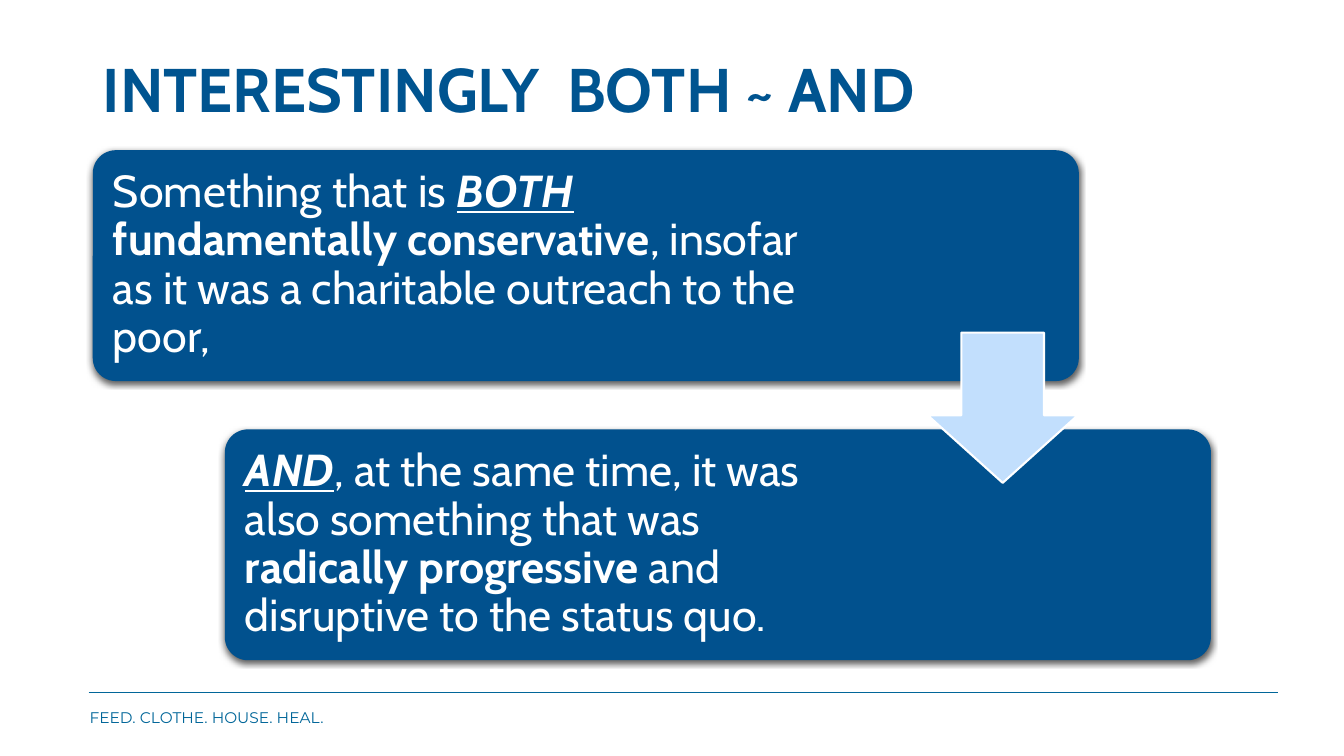
from lxml import etree
from pptx import Presentation
from pptx.dml.color import RGBColor
from pptx.enum.shapes import MSO_CONNECTOR as Connector, MSO_SHAPE as Shape
from pptx.enum.text import MSO_ANCHOR as Anchor
from pptx.oxml import parse_xml
from pptx.oxml.ns import nsdecls, qn
from pptx.util import Inches, Pt

TITLE_BLUE = RGBColor(0x00, 0x54, 0x90)
CARD_BLUE = RGBColor(0x01, 0x51, 0x8E)
FOOTER_BLUE = RGBColor(0x01, 0x66, 0x99)
ARROW_BLUE = RGBColor(0xC2, 0xDF, 0xFD)
WHITE = RGBColor(0xFF, 0xFF, 0xFF)

CARD_WIDTH, CARD_HEIGHT = 9.78, 2.29
TEXT_OFFSET = 0.07
STRONG = {"bold": True}
EMPHASIS = {"bold": True, "italic": True, "underline": True}

# Left, top, text width, spans
CARDS = [
    (0.92, 1.49, 7.41, [
        ("Something that is ", {}),
        ("BOTH", EMPHASIS),
        (" ", {}),
        ("fundamentally conservative", STRONG),
        (", insofar as it was a charitable outreach to the poor,", {}),
    ]),
    (2.23, 4.26, 6.43, [
        ("AND", EMPHASIS),
        (", at the same time, it was also something that was ", {}),
        ("radically progressive", STRONG),
        (" and disruptive to the status quo.", {}),
    ]),
]


def add_text(page, place, spans, font, color, anchor=Anchor.MIDDLE,
             inset=None, line_spacing=None):
    """Add a one-paragraph box; each span is a text with its own font values."""
    frame = page.shapes.add_textbox(*map(Inches, place)).text_frame
    frame.word_wrap = True
    frame.vertical_anchor = anchor
    if inset is not None:
        for side in ("left", "top", "right", "bottom"):
            setattr(frame, f"margin_{side}", Inches(inset))
    para = frame.paragraphs[0]
    para.line_spacing = line_spacing
    for text, emphasis in spans:
        span = para.add_run()
        span.text = text
        for name, value in {**font, **emphasis}.items():
            setattr(span.font, name, value)
        span.font.color.rgb = color


def add_filled_shape(page, kind, place, fill, adjustments):
    shape = page.shapes.add_shape(kind, *map(Inches, place))
    shape.shadow.inherit = False
    shape.fill.solid()
    shape.fill.fore_color.rgb = fill
    for index, value in enumerate(adjustments):
        shape.adjustments[index] = value
    return shape


def add_drop_shadow(shape):
    effects = shape.element.spPr.find(qn("a:effectLst"))
    effects.append(parse_xml(
        f'<a:outerShdw {nsdecls("a")} blurRad="{Pt(4.5)}" dist="{Pt(1.5)}" '
        'dir="5400000" algn="ctr" rotWithShape="0">'
        '<a:srgbClr val="000000"><a:alpha val="63000"/></a:srgbClr>'
        '</a:outerShdw>'))


def add_card(page, left, top, text_width, spans):
    card = add_filled_shape(page, Shape.ROUNDED_RECTANGLE,
                            (left, top, CARD_WIDTH, CARD_HEIGHT),
                            CARD_BLUE, [0.1])
    card.line.fill.background()
    add_drop_shadow(card)
    place = (left + TEXT_OFFSET, top + TEXT_OFFSET,
             text_width, CARD_HEIGHT - 2 * TEXT_OFFSET)
    add_text(page, place, spans, {"name": "Cabin", "size": Pt(32)}, WHITE,
             inset=0.13, line_spacing=0.9)


def add_arrow(page):
    arrow = add_filled_shape(page, Shape.DOWN_ARROW, (9.2, 3.3, 1.49, 1.49),
                             ARROW_BLUE, [0.55, 0.45])
    arrow.line.color.rgb = WHITE
    arrow.line.width = Pt(1.5)


def add_footer(page):
    rule = page.shapes.add_connector(
        Connector.STRAIGHT, *map(Inches, (0.88, 6.87, 12.68, 6.87)))
    rule.line.color.rgb = FOOTER_BLUE
    rule.line.width = Pt(0.5)
    etree.SubElement(rule.element.spPr, qn("a:effectLst"))
    add_text(page, (0.79, 6.98, 3.72, 0.29),
             [("FEED. CLOTHE. HOUSE. HEAL.", {})],
             {"name": "Montserrat", "size": Pt(11)}, FOOTER_BLUE,
             anchor=Anchor.TOP)


def main():
    deck = Presentation()
    deck.slide_width, deck.slide_height = Inches(13.33), Inches(7.5)
    page = deck.slides.add_slide(deck.slide_layouts[6])
    add_footer(page)
    add_text(page, (0.92, 0.19, 11.5, 1.45),
             [("INTERESTINGLY  BOTH ~ AND", STRONG)],
             {"name": "Cabin", "size": Pt(44)}, TITLE_BLUE, line_spacing=0.9)
    for card in CARDS:
        add_card(page, *card)
    add_arrow(page)
    deck.save("out.pptx")


if __name__ == "__main__":
    main()
